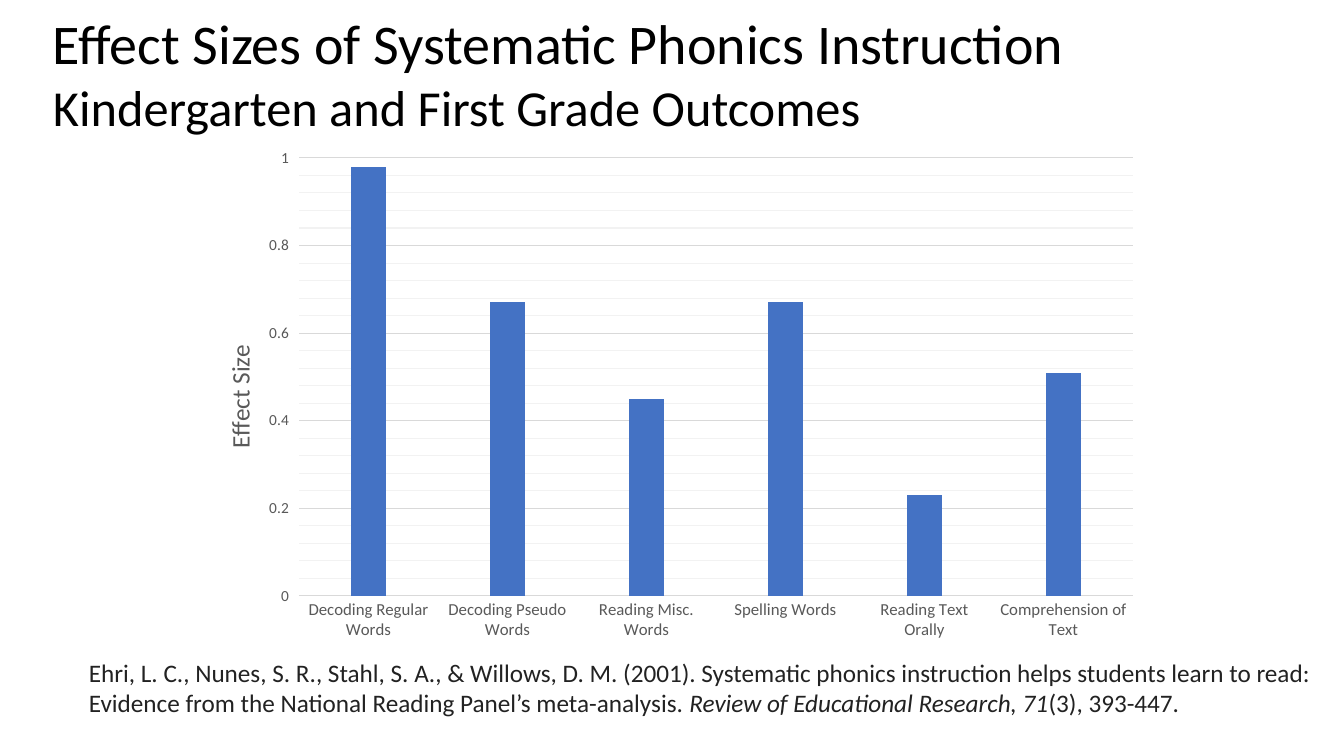
from lxml import etree
from pptx import Presentation
from pptx import util as u
from pptx.chart.data import CategoryChartData
from pptx.dml.color import RGBColor
from pptx.enum import chart as ch
from pptx.oxml.ns import qn

PX = 914400 / 100.8
FONT = "Calibri"
BLACK = RGBColor(0x00, 0x00, 0x00)
INK = RGBColor(0x22, 0x22, 0x22)
GREY = RGBColor(0x59, 0x59, 0x59)
GRID = RGBColor(0xD9, 0xD9, 0xD9)
MINOR_GRID = RGBColor(0xF2, 0xF2, 0xF2)
BLUE = RGBColor(0x44, 0x72, 0xC4)
CHART_W, CHART_H = 960, 512


def add_text(box, paragraphs, color):
    """Add a text box; each paragraph is a list of (text, size, italic) runs."""
    tf = slide.shapes.add_textbox(*[round(v * PX) for v in box]).text_frame
    tf.word_wrap = True
    for i, runs in enumerate(paragraphs):
        p = tf.add_paragraph() if i else tf.paragraphs[0]
        for words, size, italic in runs:
            r = p.add_run()
            r.text = words
            r.font.name, r.font.size = FONT, u.Pt(size)
            r.font.italic = italic
            r.font.color.rgb = color


def set_layout(parent, index, **settings):
    """Place a chart part; lengths are px inside the chart."""
    for old in parent.findall(qn("c:layout")):
        parent.remove(old)
    layout = etree.Element(qn("c:layout"))
    manual = etree.SubElement(layout, qn("c:manualLayout"))
    whole = {"x": CHART_W, "w": CHART_W, "y": CHART_H, "h": CHART_H}
    for tag, v in settings.items():
        v = v / whole[tag] if tag in whole else v
        etree.SubElement(manual, qn("c:" + tag)).set("val", str(v))
    parent.insert(index, layout)


prs = Presentation()
prs.slide_width, prs.slide_height = round(1344 * PX), round(756 * PX)
slide = prs.slides.add_slide(prs.slide_layouts[6])

# Heading
add_text((43, 4, 1301, 207), [
    [("Effect Sizes of Systematic Phonics Instruction", 40, False)],
    [("Kindergarten and First Grade Outcomes", 36, False)],
], BLACK)

# Citation
add_text((79, 652, 1265, 100), [[
    ("Ehri, L. C., Nunes, S. R., Stahl, S. A., & Willows, D. M. (2001). "
     "Systematic phonics instruction helps students learn to read: Evidence "
     "from the National Reading Panel’s meta-analysis. ", 18, False),
    ("Review of Educational Research, 71", 18, True),
    ("(3), 393-447.", 18, False),
]], INK)

# Effect size chart
effects = {
    "Decoding Regular Words": 0.98,
    "Decoding Pseudo Words": 0.67,
    "Reading Misc. Words": 0.45,
    "Spelling Words": 0.67,
    "Reading Text Orally": 0.23,
    "Comprehension of Text": 0.51,
}
data = CategoryChartData()
data.categories = list(effects)
data.add_series("Series 1", list(effects.values()))
chart = slide.shapes.add_chart(
    ch.XL_CHART_TYPE.COLUMN_CLUSTERED,
    *[round(v * PX) for v in (192, 138, CHART_W, CHART_H)], data).chart
chart.has_legend = False
chart.has_title = False
chart.font.name, chart.font.size = FONT, u.Pt(10)
chart.font.color.rgb = BLACK

plot = chart.plots[0]
plot.gap_width = 300
plot.vary_by_categories = False
fill = plot.series[0].format.fill
fill.solid()
fill.fore_color.rgb = BLUE

# Axes
cat, val = chart.category_axis, chart.value_axis
for axis, size in ((cat, 12), (val, 11)):
    font = axis.tick_labels.font
    font.name, font.size = FONT, u.Pt(size)
    font.color.rgb = GREY
cat.major_tick_mark = ch.XL_TICK_MARK.NONE
val.minimum_scale, val.maximum_scale = 0, 1
val.major_unit, val.minor_unit = 0.2, 0.04
val.major_tick_mark = ch.XL_TICK_MARK.OUTSIDE
val.format.line.fill.background()
val.has_major_gridlines = val.has_minor_gridlines = True
for part in (cat, val.major_gridlines):
    part.format.line.color.rgb = GRID
    part.format.line.width = u.Pt(0.75)

# Minor gridlines
minor = val._element.find(qn("c:minorGridlines"))
sp_pr = etree.SubElement(minor, qn("c:spPr"))
ln = etree.SubElement(sp_pr, qn("a:ln"), w=str(u.Pt(0.75)))
solid = etree.SubElement(ln, qn("a:solidFill"))
etree.SubElement(solid, qn("a:srgbClr"), val=str(MINOR_GRID))

# Value axis title, turned to read upwards
title = val.axis_title
tf = title.text_frame
r = tf.paragraphs[0].add_run()
r.text = "Effect Size"
r.font.name, r.font.size, r.font.bold = FONT, u.Pt(18), False
r.font.color.rgb = GREY
body = title._element.find(".//" + qn("a:bodyPr"))
body.set("rot", "-5400000")
body.set("vert", "horz")

# Positions inside the chart
set_layout(title._element, 1, xMode="edge", yMode="edge", x=26, y=202)
set_layout(chart._chartSpace.find(".//" + qn("c:plotArea")), 0,
           layoutTarget="inner", xMode="edge", yMode="edge",
           x=107, y=20, w=834, h=438)

prs.save("out.pptx")
